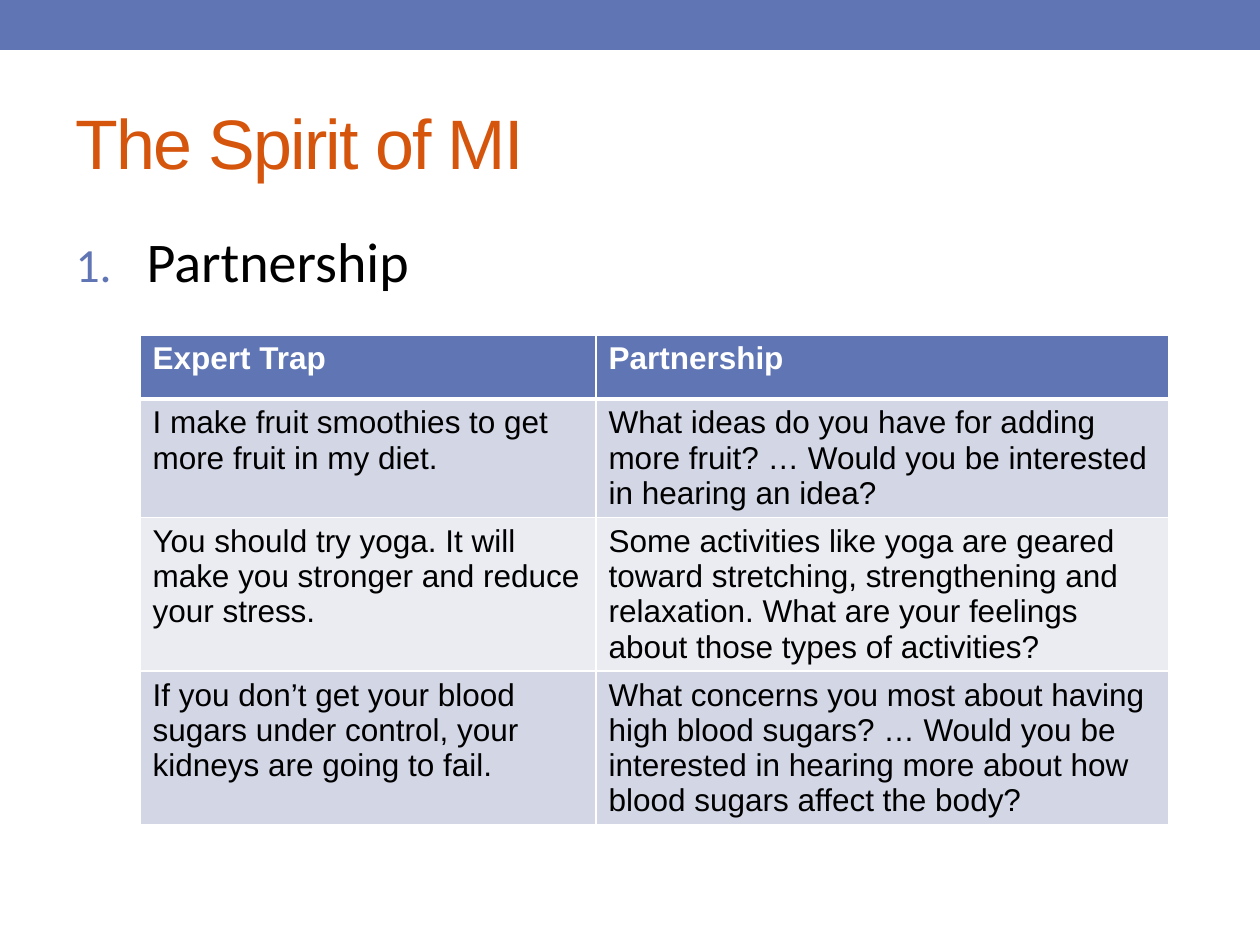
from lxml import etree
from pptx import Presentation
from pptx.dml.color import RGBColor
from pptx.enum.shapes import MSO_SHAPE
from pptx.enum.text import MSO_ANCHOR, MSO_AUTO_SIZE, PP_ALIGN
from pptx.oxml.ns import qn
from pptx.util import Emu, Pt

COLORS = {"blue": "6076B4", "orange": "D6550D", "black": "000000",
          "white": "FFFFFF", "band1": "D2D6E5", "band2": "EAECF2"}


def px(n):
    return Emu(round(n * 914400 / 126))


def write(tf, text, size=18, font="Arial", color="black", bold=False):
    p = tf.paragraphs[0]
    p.alignment = PP_ALIGN.LEFT
    r = p.add_run()
    r.text = text
    r.font.size, r.font.name, r.font.bold = Pt(size), font, bold
    r.font.color.rgb = RGBColor.from_string(COLORS[color])
    return p


prs = Presentation()
prs.slide_width, prs.slide_height = px(1260), px(945)
s = prs.slides.add_slide(prs.slide_layouts[1])

# Top band
band = s.shapes.add_shape(MSO_SHAPE.RECTANGLE, 0, 0, px(1260), px(50))
band.shadow.inherit = False
band.fill.solid()
band.fill.fore_color.rgb = RGBColor.from_string(COLORS["blue"])
band.line.fill.background()

# Title and numbered list
title, body = s.shapes.title, s.placeholders[1]
for sp, box in ((title, (63, 73, 1134, 136)), (body, (63, 220, 757, 672))):
    sp.left, sp.top, sp.width, sp.height = map(px, box)
    sp.text_frame.auto_size = MSO_AUTO_SIZE.NONE
title.text_frame.vertical_anchor = MSO_ANCHOR.MIDDLE
p = write(title.text_frame, "The Spirit of MI", size=40, color="orange")
p.runs[0].font._element.set("spc", "-100")

p = write(body.text_frame, "Partnership", size=32, font="Calibri")
p.space_after = Pt(10)
pPr = p._p.get_or_add_pPr()
pPr.set("marL", str(px(71)))
pPr.set("indent", str(-px(71)))
bullet_color = etree.SubElement(pPr, qn("a:buClr"))
etree.SubElement(bullet_color, qn("a:srgbClr"), val=COLORS["blue"])
etree.SubElement(pPr, qn("a:buSzPct"), val="85000")
etree.SubElement(pPr, qn("a:buFont"), typeface="+mj-lt")
etree.SubElement(pPr, qn("a:buAutoNum"), type="arabicPeriod")

# Comparison table
rows = [
    ("Expert Trap", "Partnership"),
    ("I make fruit smoothies to get more fruit in my diet.",
     "What ideas do you have for adding more fruit? … Would you be interested "
     "in hearing an idea?"),
    ("You should try yoga. It will make you stronger and reduce your stress.",
     "Some activities like yoga are geared toward stretching, strengthening and "
     "relaxation. What are your feelings about those types of activities?"),
    ("If you don’t get your blood sugars under control, your kidneys are going to fail.",
     "What concerns you most about having high blood sugars? … Would you be "
     "interested in hearing more about how blood sugars affect the body?"),
]
fills = ["blue", "band1", "band2", "band1"]
table = s.shapes.add_table(len(rows), 2, px(140), px(335), px(1029), px(256)).table
table.columns[0].width, table.columns[1].width = px(456), px(573)
for i, row in enumerate(rows):
    header = i == 0
    for j, text in enumerate(row):
        cell = table.cell(i, j)
        write(cell.text_frame, text, bold=header, color="white" if header else "black")
        # White borders go before the fill, heavier around the header's lower edge
        tcPr = cell._tc.get_or_add_tcPr()
        for side in ("lnL", "lnR", "lnT", "lnB"):
            heavy = (i, side) in ((0, "lnB"), (1, "lnT"))
            ln = etree.SubElement(tcPr, qn(f"a:{side}"), w=str(Pt(3 if heavy else 1)))
            solid = etree.SubElement(ln, qn("a:solidFill"))
            etree.SubElement(solid, qn("a:srgbClr"), val=COLORS["white"])
        cell.fill.solid()
        cell.fill.fore_color.rgb = RGBColor.from_string(COLORS[fills[i]])

prs.save("out.pptx")
